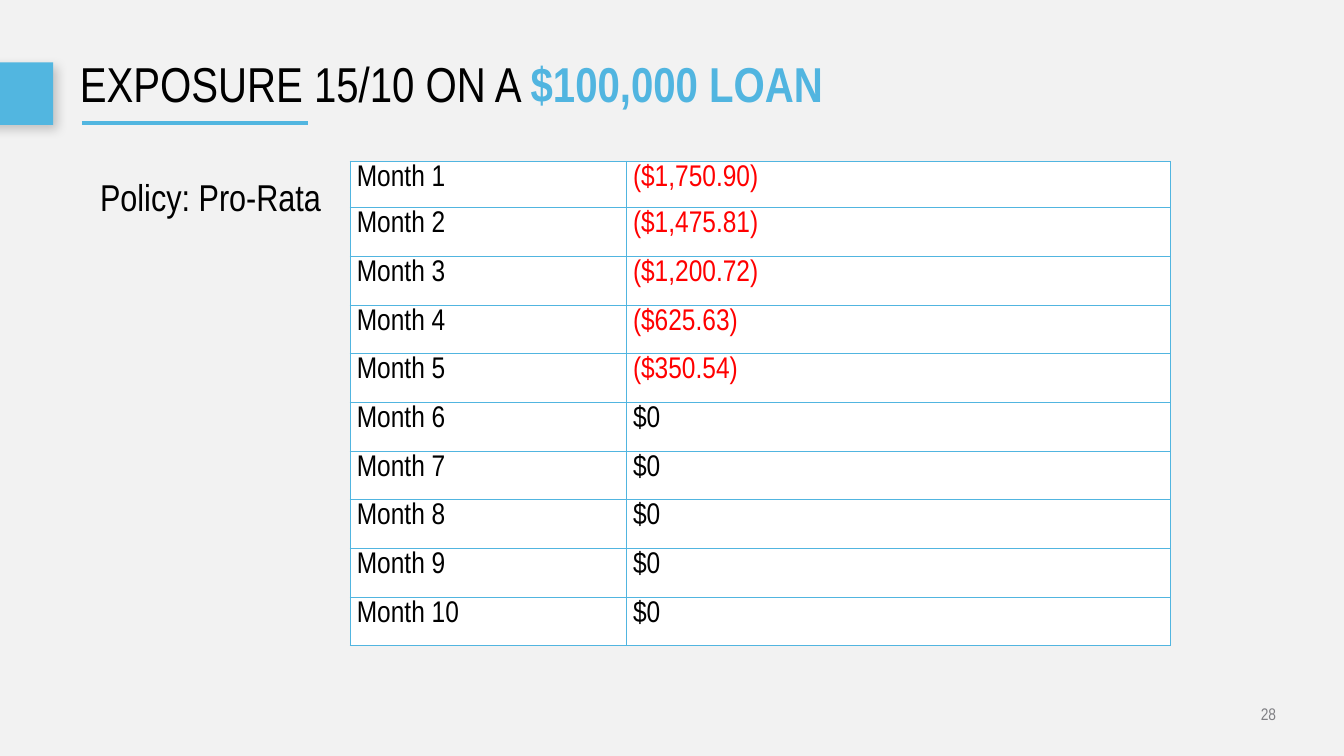
from typing import NamedTuple

from lxml.etree import SubElement as Sub
from pptx import Presentation
from pptx.dml.color import RGBColor
from pptx.enum.shapes import MSO_CONNECTOR as Link, MSO_SHAPE as Kind
from pptx.enum.text import MSO_ANCHOR as Anchor, MSO_AUTO_SIZE as Fit, PP_ALIGN as Align
from pptx.oxml.ns import qn
from pptx.util import Emu, Pt

SCALE = 9144
FONT = "Arial Narrow"
BLACK, WHITE, RED = "000000", "FFFFFF", "FF0000"
BLUE, SKY, GREY, PALE = "51B5E0", "52B6E0", "808084", "F2F2F2"


class Box(NamedTuple):
    left: int
    top: int
    width: int
    height: int


class Run(NamedTuple):
    text: str
    size: float
    color: str = BLACK
    bold: bool = False


class Entry(NamedTuple):
    month: str
    sum: str


SUMS = ["($1,750.90)", "($1,475.81)", "($1,200.72)", "($625.63)", "($350.54)"] + ["$0"] * 5
ENTRIES = [Entry(f"Month {n}", total) for n, total in enumerate(SUMS, 1)]


def px(n: int) -> Emu:
    return Emu(n * SCALE)


def area(box: Box) -> list[Emu]:
    return [px(n) for n in box]


def paint(fill, color: str) -> None:
    fill.solid()
    fill.fore_color.rgb = RGBColor.from_string(color)


def write(para, *runs: Run) -> None:
    for item in runs:
        run = para.add_run()
        run.text = item.text
        font = run.font
        font.name, font.size, font.bold = FONT, Pt(item.size), item.bold
        font.color.rgb = RGBColor.from_string(item.color)


def strip(frame) -> None:
    frame.margin_left = frame.margin_right = 0
    frame.margin_top = frame.margin_bottom = 0
    frame.vertical_anchor = Anchor.MIDDLE


def add_title(slide, box: Box, *runs: Run) -> None:
    title = slide.shapes.title
    title.left, title.top, title.width, title.height = area(box)
    frame = title.text_frame
    strip(frame)
    frame.word_wrap = True
    frame.auto_size = Fit.NONE
    para = frame.paragraphs[0]
    para.alignment = Align.LEFT
    para.line_spacing = 0.9
    write(para, *runs)


def add_text(slide, box: Box, run: Run):
    frame = slide.shapes.add_textbox(*area(box)).text_frame
    frame.word_wrap = True
    write(frame.paragraphs[0], run)
    return frame


def add_tab(slide, box: Box) -> None:
    tab = slide.shapes.add_shape(Kind.RECTANGLE, *area(box))
    tab.shadow.inherit = False
    paint(tab.fill, SKY)
    tab.line.fill.background()
    effects = tab._element.spPr.find(qn("a:effectLst"))
    shade = Sub(effects, qn("a:outerShdw"), blurRad=str(Pt(12)), dist=str(Pt(7)),
                dir="2700000", algn="tl", rotWithShape="0")
    tint = Sub(shade, qn("a:srgbClr"), val=BLACK)
    Sub(tint, qn("a:alpha"), val="20000")


def add_rule(slide, left: int, right: int, top: int) -> None:
    rule = slide.shapes.add_connector(Link.STRAIGHT, px(left), px(top), px(right), px(top))
    rule.line.width = Pt(5)
    rule.line.color.rgb = RGBColor.from_string(SKY)
    Sub(rule._element.spPr, qn("a:effectLst"))


def add_edges(cell) -> None:
    props = cell._tc.get_or_add_tcPr()
    for spot, side in enumerate(("lnL", "lnR", "lnT", "lnB")):
        edge = Sub(props, qn(f"a:{side}"), w=str(Pt(1)))
        Sub(Sub(edge, qn("a:solidFill")), qn("a:srgbClr"), val=BLUE)
        props.insert(spot, edge)


def add_cell(cell, run: Run) -> None:
    cell.margin_left = cell.margin_right = px(10)
    cell.margin_top = cell.margin_bottom = px(5)
    cell.vertical_anchor = Anchor.TOP
    paint(cell.fill, WHITE)
    add_edges(cell)
    write(cell.text_frame.paragraphs[0], run)


def add_grid(slide, box: Box, entries: list[Entry]) -> None:
    table = slide.shapes.add_table(len(entries), 2, *area(box)).table
    table.first_row = table.horz_banding = False
    for col, width in zip(table.columns, (411, 810)):
        col.width = px(width)
    first = px(69)
    other = Emu((px(box.height) - first) // (len(entries) - 1))
    for n, entry in enumerate(entries):
        table.rows[n].height = other if n else first
        color = RED if entry.sum.startswith("(") else BLACK
        add_cell(table.cell(n, 0), Run(entry.month, 32))
        add_cell(table.cell(n, 1), Run(entry.sum, 32, color))


def main() -> None:
    deck = Presentation()
    deck.slide_width, deck.slide_height = px(2000), px(1125)
    slide = deck.slides.add_slide(deck.slide_layouts[5])
    paint(slide.background.fill, PALE)
    add_tab(slide, Box(-51, 93, 130, 93))
    add_rule(slide, 122, 459, 183)
    add_title(slide, Box(119, 59, 1780, 141),
              Run("EXPOSURE 15/10 ON A ", 52.5), Run("$100,000 LOAN", 52.5, BLUE, True))
    page = add_text(slide, Box(1449, 1043, 450, 38), Run("28", 18, GREY))
    strip(page)
    page.paragraphs[0].alignment = Align.RIGHT
    add_grid(slide, Box(521, 240, 1221, 721), ENTRIES)
    policy = add_text(slide, Box(139, 255, 469, 77), Run("Policy: Pro-Rata", 40))
    policy.auto_size = Fit.SHAPE_TO_FIT_TEXT
    deck.save("out.pptx")


if __name__ == "__main__":
    main()
